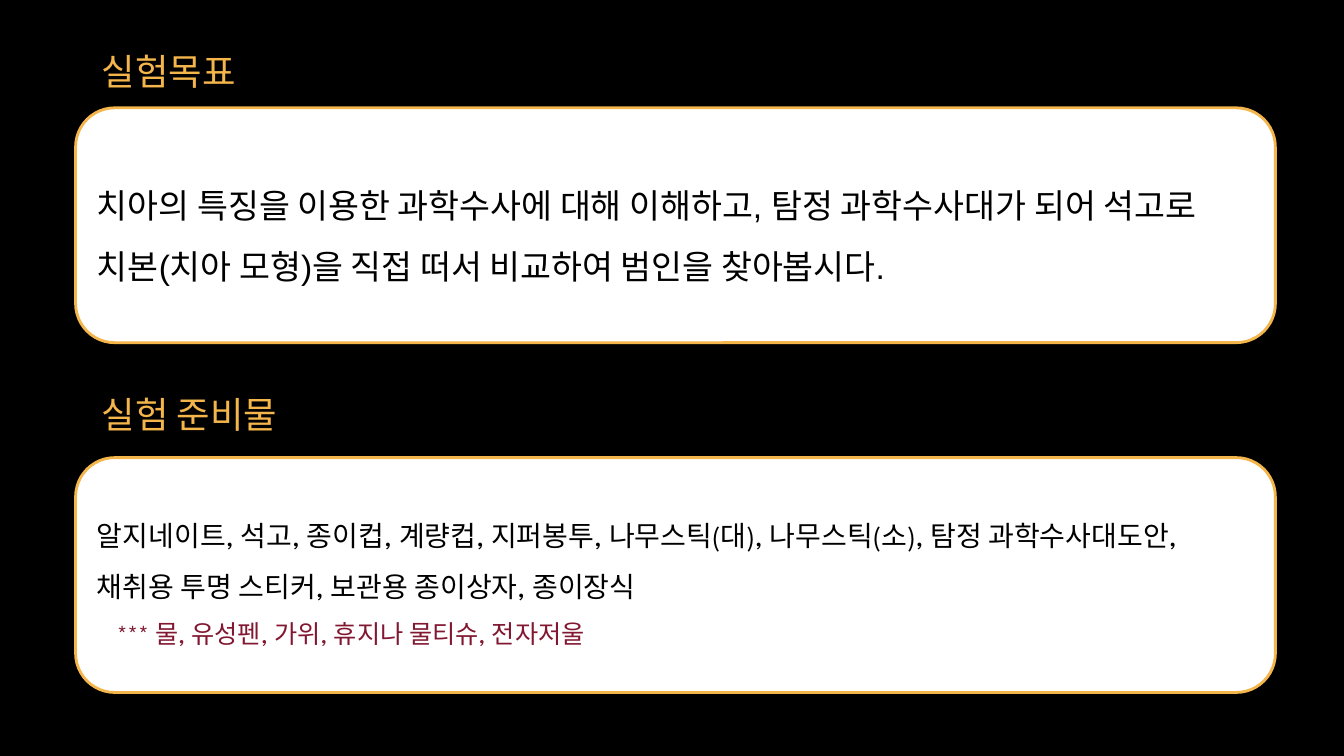
from dataclasses import dataclass

from pptx import Presentation
from pptx.dml.color import RGBColor
from pptx.enum.shapes import MSO_SHAPE
from pptx.enum.text import MSO_ANCHOR, MSO_AUTO_SIZE, PP_ALIGN
from pptx.util import Inches, Pt

ROUNDED = MSO_SHAPE.ROUNDED_RECTANGLE
TOP, MIDDLE = MSO_ANCHOR.TOP, MSO_ANCHOR.MIDDLE
LEFT = PP_ALIGN.LEFT
FIXED_SIZE = MSO_AUTO_SIZE.NONE
TITLE_ONLY = 5


@dataclass(frozen=True)
class Theme:
    background: RGBColor = RGBColor(0x00, 0x00, 0x00)
    accent: RGBColor = RGBColor(0xF4, 0xB5, 0x4B)
    panel: RGBColor = RGBColor(0xFF, 0xFF, 0xFF)
    text: RGBColor = RGBColor(0x00, 0x00, 0x00)
    note: RGBColor = RGBColor(0x81, 0x17, 0x31)
    display_font: str = "League Spartan"
    body_font: str = "Arial"
    heading_size: int = 26
    goal_size: int = 24
    supplies_size: int = 20
    note_size: int = 18


theme = Theme()


def write(paragraph, text, *, font, size, color, spacing=1.0, indent=0):
    """Put formatted, left-aligned text into a paragraph."""
    paragraph.alignment = LEFT
    paragraph.line_spacing = spacing
    if indent:
        paragraph._p.get_or_add_pPr().set("marL", str(Inches(indent)))
    run = paragraph.add_run()
    run.text = text
    run.font.name = font
    run.font.size = Pt(size)
    run.font.color.rgb = color


# Slide and background
presentation = Presentation()
presentation.slide_width = Inches(13.33)
presentation.slide_height = Inches(7.5)
slide = presentation.slides.add_slide(presentation.slide_layouts[TITLE_ONLY])
slide.background.fill.solid()
slide.background.fill.fore_color.rgb = theme.background

# Headings: the first is the slide title
goal_heading = slide.shapes.title
goal_heading.left, goal_heading.top = Inches(0.91), Inches(0.39)
goal_heading.width, goal_heading.height = Inches(1.96), Inches(0.48)
supplies_heading = slide.shapes.add_textbox(
    Inches(0.91), Inches(3.79), Inches(2.3), Inches(0.48))

for heading, text in ((goal_heading, "실험목표"),
                      (supplies_heading, "실험 준비물")):
    frame = heading.text_frame
    frame.word_wrap = True
    frame.auto_size = FIXED_SIZE
    frame.vertical_anchor = TOP
    frame.margin_left = frame.margin_right = Inches(0.1)
    frame.margin_top = frame.margin_bottom = Inches(0.1)
    write(frame.paragraphs[0], text, font=theme.display_font,
          size=theme.heading_size, color=theme.accent)

# Panels: top edge and paragraphs
goal = [
    ("치아의 특징을 이용한 과학수사에 대해 이해하고, 탐정 과학수사대가 되어 석고로 "
     "치본(치아 모형)을 직접 떠서 비교하여 범인을 찾아봅시다.",
     dict(font=theme.body_font, size=theme.goal_size, color=theme.text)),
]
supplies = [
    ("알지네이트, 석고, 종이컵, 계량컵, 지퍼봉투, 나무스틱(대), 나무스틱(소), 탐정 "
     "과학수사대도안, 채취용 투명 스티커, 보관용 종이상자, 종이장식",
     dict(font=theme.display_font, size=theme.supplies_size, color=theme.text)),
    ("*** 물, 유성펜, 가위, 휴지나 물티슈, 전자저울",
     dict(font=theme.display_font, size=theme.note_size, color=theme.note,
          indent=0.2)),
]

for top, content in ((1.07, goal), (4.54, supplies)):
    panel = slide.shapes.add_shape(
        ROUNDED, Inches(0.75), Inches(top), Inches(11.9), Inches(2.33))
    panel.shadow.inherit = False
    panel.fill.solid()
    panel.fill.fore_color.rgb = theme.panel
    panel.line.color.rgb = theme.accent
    panel.line.width = Pt(2)
    frame = panel.text_frame
    frame.word_wrap = True
    frame.vertical_anchor = MIDDLE
    for index, (text, style) in enumerate(content):
        paragraph = frame.add_paragraph() if index else frame.paragraphs[0]
        write(paragraph, text, spacing=1.5, **style)

presentation.save("out.pptx")
